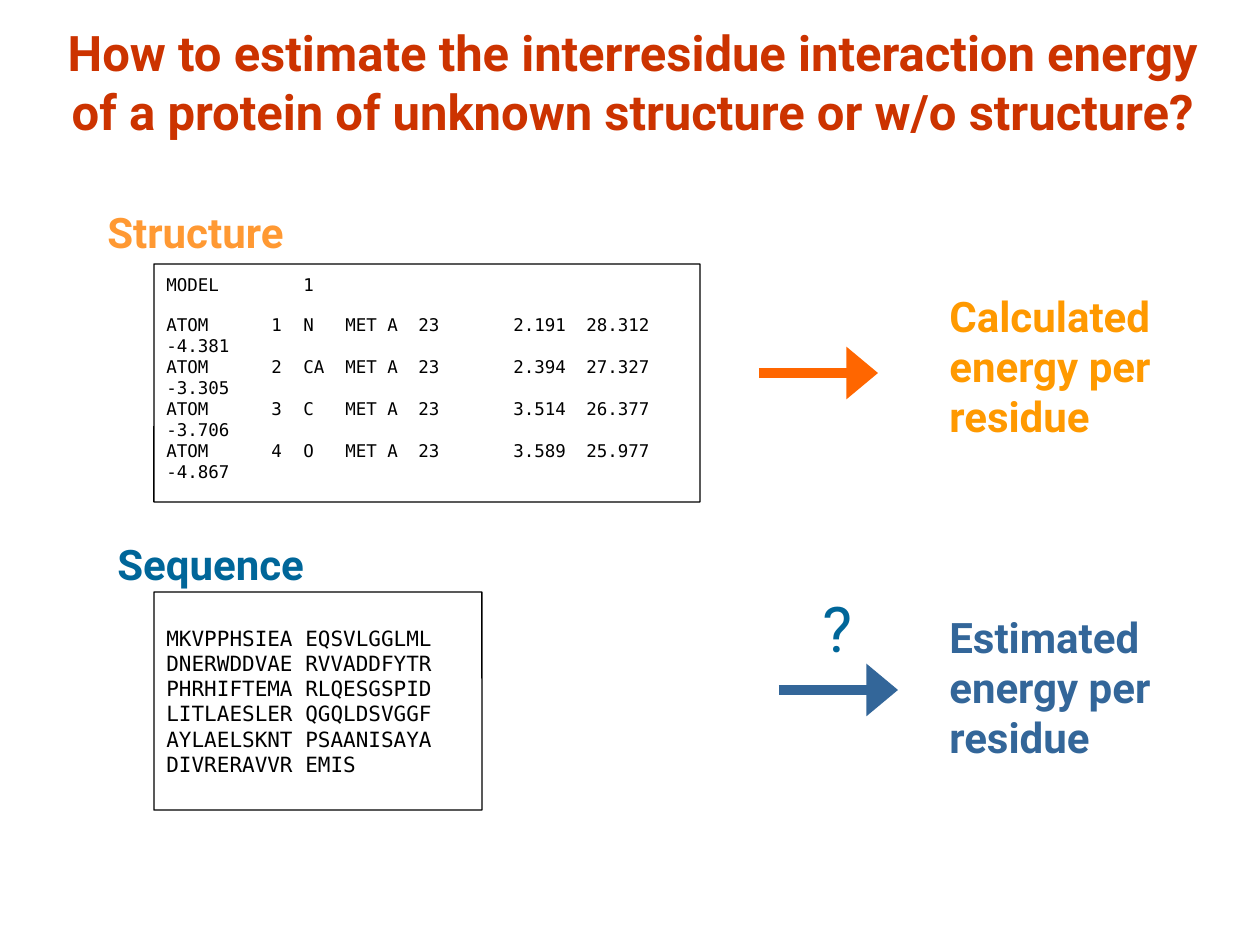
import pptx
import pptx.dml.color
import pptx.enum.shapes
import pptx.enum.text
import pptx.util
from lxml import etree
from pptx.oxml.ns import qn

PX = 914400 // 126
BLACK = pptx.dml.color.RGBColor(0x00, 0x00, 0x00)
WHITE = pptx.dml.color.RGBColor(0xFF, 0xFF, 0xFF)
RED = pptx.dml.color.RGBColor(0xCC, 0x33, 0x00)
LIGHT_ORANGE = pptx.dml.color.RGBColor(0xFF, 0x99, 0x33)
ORANGE = pptx.dml.color.RGBColor(0xFF, 0x99, 0x00)
DEEP_ORANGE = pptx.dml.color.RGBColor(0xFF, 0x66, 0x00)
TEAL = pptx.dml.color.RGBColor(0x00, 0x66, 0x99)
BLUE = pptx.dml.color.RGBColor(0x33, 0x66, 0x99)
LEFT = pptx.enum.text.PP_ALIGN.LEFT
CENTER = pptx.enum.text.PP_ALIGN.CENTER

presentation = pptx.Presentation()
presentation.slide_width = 1260 * PX
presentation.slide_height = 945 * PX
slide = presentation.slides.add_slide(presentation.slide_layouts[6])


def write(shape, text, size, color, font="Roboto", bold=False, align=LEFT):
    shape.text_frame.text = text
    for paragraph in shape.text_frame.paragraphs:
        paragraph.alignment = align
        for run in paragraph.runs:
            run.font.name = font
            run.font.size = pptx.util.Pt(size)
            run.font.bold = bold
            run.font.color.rgb = color


def add_listing(top, width, height, lines, size, pitch):
    box = slide.shapes.add_shape(
        pptx.enum.shapes.MSO_SHAPE.ROUNDED_RECTANGLE,
        154 * PX, top * PX, width * PX, height * PX)
    box.adjustments[0] = 0.001
    box.shadow.inherit = False
    box.fill.solid()
    box.fill.fore_color.rgb = WHITE
    box.line.color.rgb = BLACK
    box.line.width = pptx.util.Pt(0.75)
    write(box, "\n".join(lines), size, BLACK, "DejaVu Sans Mono")
    for paragraph in box.text_frame.paragraphs:
        paragraph.line_spacing = pptx.util.Pt(pitch)
    return box


# Title, headings and results
for left, top, width, height, text, size, color, align in (
    (29, 16, 1207, 189, "How to estimate the interresidue interaction energy "
     "of a protein of unknown structure or w/o structure?", 28, RED, CENTER),
    (95, 200, 218, 63, "Structure", 24, LIGHT_ORANGE, LEFT),
    (105, 532, 228, 63, "Sequence", 24, TEAL, LEFT),
    (937, 284, 248, 165, "Calculated energy per residue", 24, ORANGE, LEFT),
    (937, 605, 253, 165, "Estimated energy per residue", 24, BLUE, LEFT),
):
    text_box = slide.shapes.add_textbox(left * PX, top * PX, width * PX, height * PX)
    text_box.text_frame.word_wrap = True
    write(text_box, text, size, color, bold=True, align=align)

# Structure: atom records in columns
atom_lines = ["MODEL\t\t1"]
for number, atom, x, y, z in (
    (1, "N", "2.191", "28.312", "-4.381"),
    (2, "CA", "2.394", "27.327", "-3.305"),
    (3, "C", "3.514", "26.377", "-3.706"),
    (4, "O", "3.589", "25.977", "-4.867"),
):
    atom_lines.append(f"ATOM\t{number}\t{atom}\tMET A\t23\t{x}\t{y}\v{z}")
structure = add_listing(264, 546, 238, atom_lines, 10, 12)
structure.text_frame.vertical_anchor = pptx.enum.text.MSO_ANCHOR.TOP
structure.text_frame.margin_top = 10 * PX
structure.text_frame.paragraphs[1].space_before = pptx.util.Pt(11)
for paragraph in structure.text_frame.paragraphs:
    properties = paragraph._p.get_or_add_pPr()
    tab_list = etree.SubElement(properties, qn("a:tabLst"))
    for position in (105, 137, 179, 252, 347, 420):
        etree.SubElement(tab_list, qn("a:tab"), pos=str(position * PX), algn="l")

# Sequence
sequence_lines = (
    "MKVPPHSIEA EQSVLGGLML",
    "DNERWDDVAE RVVADDFYTR",
    "PHRHIFTEMA RLQESGSPID",
    "LITLAESLER QGQLDSVGGF",
    "AYLAELSKNT PSAANISAYA",
    "DIVRERAVVR EMIS",
)
sequence = add_listing(592, 328, 218, sequence_lines, 12, 14.4)
sequence.text_frame.vertical_anchor = pptx.enum.text.MSO_ANCHOR.MIDDLE

# Arrows
for left, y, color in ((759, 373, DEEP_ORANGE), (779, 690, BLUE)):
    arrow = slide.shapes.add_connector(
        pptx.enum.shapes.MSO_CONNECTOR.STRAIGHT,
        left * PX, y * PX, (left + 119) * PX, y * PX)
    arrow.line.color.rgb = color
    arrow.line.width = pptx.util.Pt(6)
    etree.SubElement(arrow.line._get_or_add_ln(), qn("a:tailEnd"),
                     type="triangle", w="lg", len="med")
    etree.SubElement(arrow._element.spPr, qn("a:effectLst"))

# Question mark above the lower arrow
question = slide.shapes.add_textbox(810 * PX, 583 * PX, 49 * PX, 88 * PX)
question.text_frame.word_wrap = False
write(question, "?", 36, TEAL, align=CENTER)

presentation.save("out.pptx")
